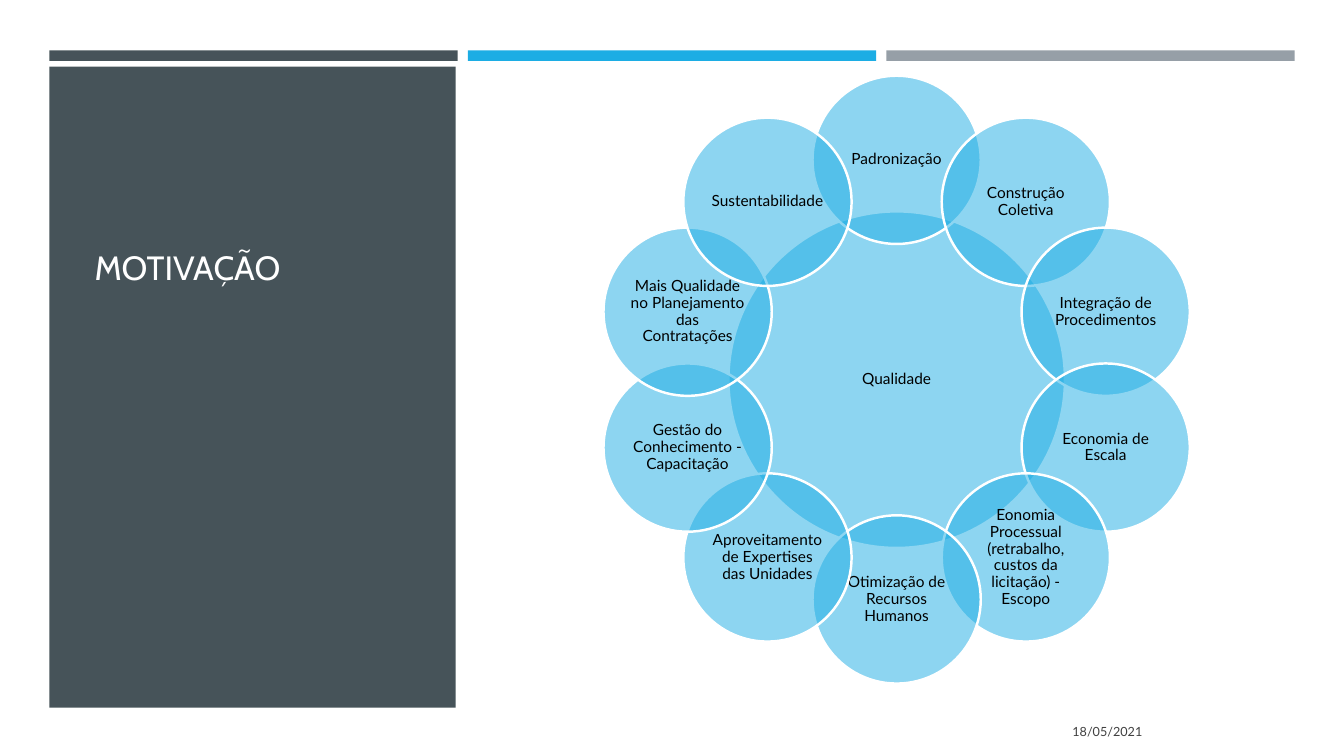
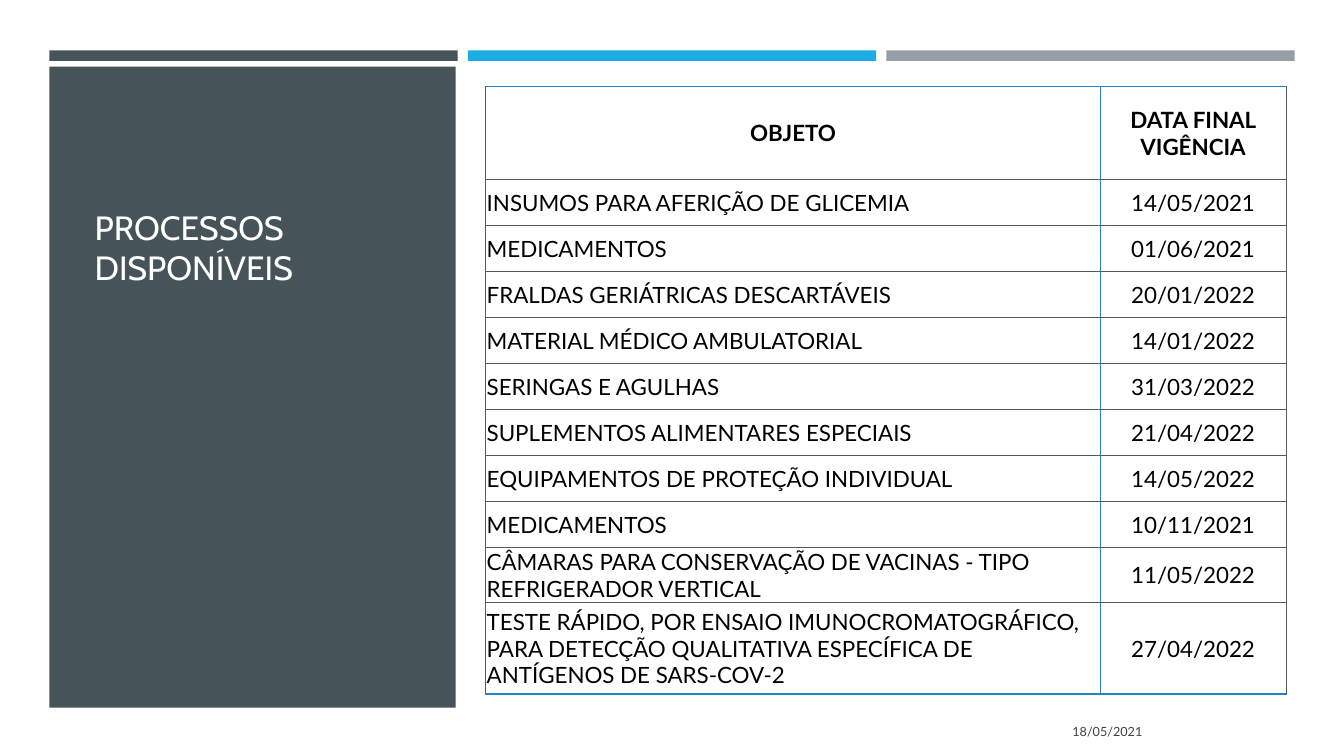
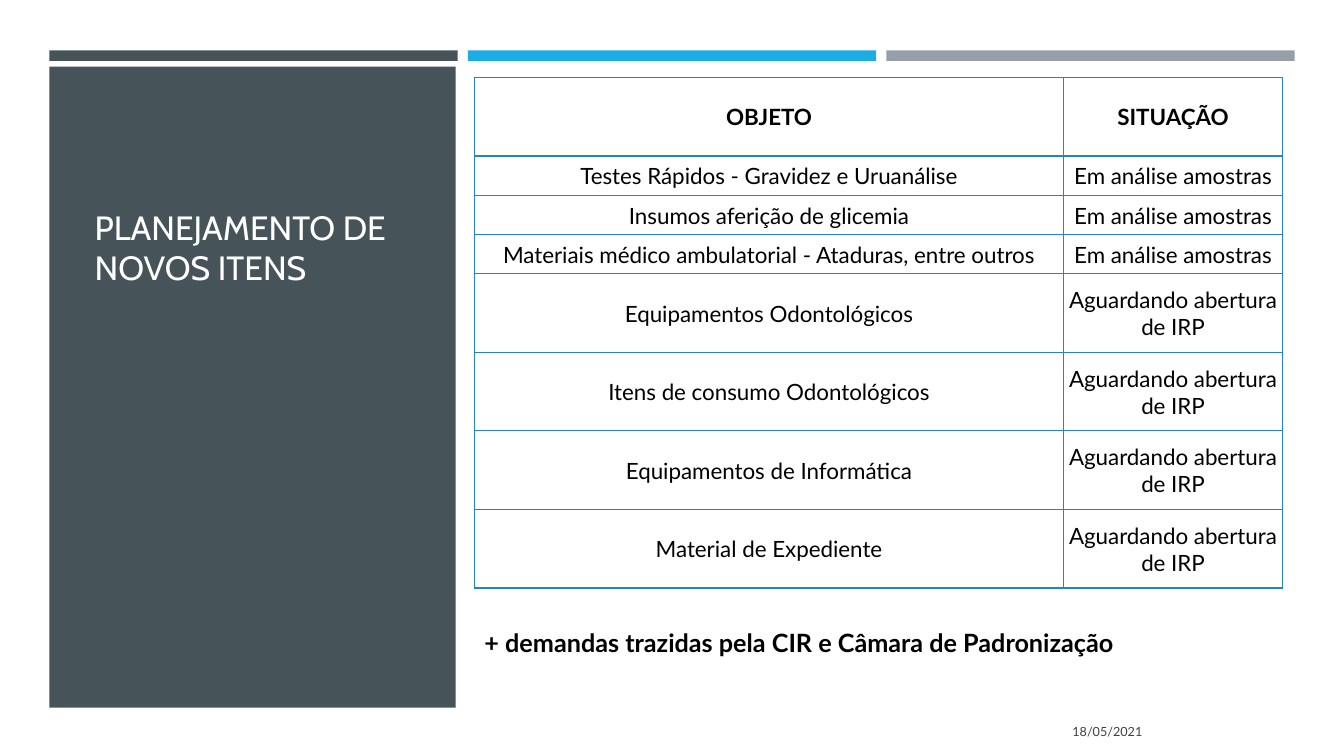
import math

import pptx
import pptx.dml.color
import pptx.enum.shapes
import pptx.enum.text
import pptx.oxml
import pptx.oxml.ns
import pptx.util

Pt = pptx.util.Pt
ALIGN = pptx.enum.text.PP_ALIGN
ANCHOR = pptx.enum.text.MSO_ANCHOR
SHAPE = pptx.enum.shapes.MSO_SHAPE

COLORS = {
    "slate": "465359",
    "sky": "1CADE4",
    "silver": "969FA7",
    "white": "FFFFFF",
    "black": "000000",
    "date": "404040",
    "border": "2683C6",
    "thin": "595959",
}
TITLE_FONT = "Cabin"
BODY_FONT = "Lato"
DATE = "18/05/2021"


def rgb(name):
    return pptx.dml.color.RGBColor.from_string(COLORS[name])


class Deck:
    def __init__(self):
        self.presentation = pptx.Presentation()
        self.presentation.slide_width = Pt(960)
        self.presentation.slide_height = Pt(540)
        self.slide = None

    def start_slide(self, title):
        blank = self.presentation.slide_layouts[6]
        self.slide = self.presentation.slides.add_slide(blank)
        for i, color in enumerate(("slate", "sky", "silver")):
            self.shape(SHAPE.RECTANGLE, 35.3 + i * 298.9, 36, 291.6, 7.6, color)
        self.shape(SHAPE.RECTANGLE, 35.3, 47.5, 290.2, 458, "slate")
        self.text(title, 60.5, 73.4, 239, 135.4, 24, "white",
                  font=TITLE_FONT, anchor=ANCHOR.BOTTOM)
        self.text(DATE, 599, 508.3, 224, 28.8, 9, "date", align=ALIGN.RIGHT)

    def shape(self, kind, left, top, width, height, color):
        shape = self.slide.shapes.add_shape(
            kind, Pt(left), Pt(top), Pt(width), Pt(height))
        shape.shadow.inherit = False
        shape.fill.solid()
        shape.fill.fore_color.rgb = rgb(color)
        shape.line.fill.background()
        return shape

    def fill_text(self, frame, text, size, color, font=BODY_FONT, bold=False,
                  align=ALIGN.LEFT):
        paragraph = frame.paragraphs[0]
        paragraph.text = text
        paragraph.alignment = align
        paragraph.font.name = font
        paragraph.font.size = Pt(size)
        paragraph.font.bold = bold
        paragraph.font.color.rgb = rgb(color)
        return paragraph

    def text(self, text, left, top, width, height, size, color,
             anchor=ANCHOR.MIDDLE, **style):
        box = self.slide.shapes.add_textbox(
            Pt(left), Pt(top), Pt(width), Pt(height))
        box.text_frame.word_wrap = True
        box.text_frame.vertical_anchor = anchor
        self.fill_text(box.text_frame, text, size, color, **style)

    def circle(self, label, center_x, center_y, diameter):
        circle = self.shape(SHAPE.OVAL, center_x - diameter / 2,
                            center_y - diameter / 2, diameter, diameter, "sky")
        tint = circle.element.spPr.find(".//" + pptx.oxml.ns.qn("a:srgbClr"))
        tint.append(pptx.oxml.parse_xml(
            f'<a:alpha {pptx.oxml.ns.nsdecls("a")} val="50000"/>'))
        circle.line.color.rgb = rgb("white")
        circle.line.width = Pt(1.75)
        frame = circle.text_frame
        frame.word_wrap = True
        frame.vertical_anchor = ANCHOR.MIDDLE
        frame.margin_left = frame.margin_right = Pt(1.4)
        frame.margin_top = frame.margin_bottom = Pt(1.4)
        paragraph = self.fill_text(frame, label, 11, "black", align=ALIGN.CENTER)
        paragraph.line_spacing = 0.9

    def ring(self, hub, labels, center_x, center_y, radius, diameter):
        self.circle(hub, center_x, center_y, diameter * 2)
        for i, label in enumerate(labels):
            angle = 2 * math.pi * i / len(labels)
            self.circle(label, center_x + radius * math.sin(angle),
                        center_y - radius * math.cos(angle), diameter)

    def borders(self, cell, sides):
        properties = cell._tc.get_or_add_tcPr()
        for i, (side, (color, width)) in enumerate(sides.items()):
            properties.insert(i, pptx.oxml.parse_xml(
                f'<a:ln{side} {pptx.oxml.ns.nsdecls("a")} w="{Pt(width)}">'
                f'<a:solidFill><a:srgbClr val="{COLORS[color]}"/></a:solidFill>'
                f'</a:ln{side}>'))

    def table(self, rows, left, top, widths, heights, first_align, inner):
        table = self.slide.shapes.add_table(
            len(rows), len(widths), Pt(left), Pt(top),
            Pt(sum(widths)), Pt(sum(heights))).table
        table.first_row = table.horz_banding = False
        for column, width in zip(table.columns, widths):
            column.width = Pt(width)
        strong = ("border", 1)
        last_row, last_column = len(rows) - 1, len(widths) - 1
        for r, values in enumerate(rows):
            table.rows[r].height = Pt(heights[r])
            for c, value in enumerate(values):
                cell = table.cell(r, c)
                cell.fill.background()
                cell.vertical_anchor = ANCHOR.MIDDLE
                cell.margin_left = cell.margin_right = cell.margin_top = Pt(0.7)
                cell.margin_bottom = Pt(0)
                centered = r == 0 or c > 0
                self.fill_text(cell.text_frame, value, 16, "black", bold=r == 0,
                               align=ALIGN.CENTER if centered else first_align)
                self.borders(cell, {
                    "L": inner if c == 0 else strong,
                    "R": inner if c == last_column else strong,
                    "T": strong if r == 0 else inner,
                    "B": strong if r == last_row else inner,
                })


MOTIVES = [
    "Padronização",
    "Construção Coletiva",
    "Integração de Procedimentos",
    "Economia de Escala",
    "Eonomia Processual (retrabalho, custos da licitação) - Escopo",
    "Otimização de Recursos Humanos",
    "Aproveitamento de Expertises das Unidades",
    "Gestão do Conhecimento - Capacitação",
    "Mais Qualidade no Planejamento das Contratações",
    "Sustentabilidade",
]

PROCESSES = [
    ("OBJETO", "DATA FINAL VIGÊNCIA"),
    ("INSUMOS PARA AFERIÇÃO DE GLICEMIA", "14/05/2021"),
    ("MEDICAMENTOS", "01/06/2021"),
    ("FRALDAS GERIÁTRICAS DESCARTÁVEIS", "20/01/2022"),
    ("MATERIAL MÉDICO AMBULATORIAL", "14/01/2022"),
    ("SERINGAS E AGULHAS", "31/03/2022"),
    ("SUPLEMENTOS ALIMENTARES ESPECIAIS", "21/04/2022"),
    ("EQUIPAMENTOS DE PROTEÇÃO INDIVIDUAL", "14/05/2022"),
    ("MEDICAMENTOS", "10/11/2021"),
    ("CÂMARAS PARA CONSERVAÇÃO DE VACINAS - TIPO REFRIGERADOR VERTICAL",
     "11/05/2022"),
    ("TESTE RÁPIDO, POR ENSAIO IMUNOCROMATOGRÁFICO, PARA DETECÇÃO QUALITATIVA "
     "ESPECÍFICA DE ANTÍGENOS DE SARS-COV-2", "27/04/2022"),
]

SAMPLES = "Em análise amostras"
WAITING = "Aguardando abertura de IRP"
NEW_ITEMS = [
    ("OBJETO", "SITUAÇÃO"),
    ("Testes Rápidos - Gravidez e Uruanálise", SAMPLES),
    ("Insumos aferição de glicemia", SAMPLES),
    ("Materiais médico ambulatorial - Ataduras, entre outros", SAMPLES),
    ("Equipamentos Odontológicos", WAITING),
    ("Itens de consumo Odontológicos", WAITING),
    ("Equipamentos de Informática", WAITING),
    ("Material de Expediente", WAITING),
]


def main():
    deck = Deck()

    deck.start_slide("MOTIVAÇÃO")
    deck.ring("Qualidade", MOTIVES, 640.5, 271.2, 157, 120.2)

    deck.start_slide("PROCESSOS DISPONÍVEIS")
    deck.table(PROCESSES, 347, 62, [439, 132.5],
               [65.8] + [32.9] * 8 + [38.6, 65.8], ALIGN.LEFT, ("thin", 0.5))

    deck.start_slide("PLANEJAMENTO DE NOVOS ITENS")
    deck.table(NEW_ITEMS, 339, 55.4, [420.7, 156.5],
               [56.1] + [28.05] * 3 + [56.1] * 4, ALIGN.CENTER, ("border", 1))
    deck.text("+ demandas trazidas pela CIR e Câmara de Padronização",
              339, 444.5, 518.4, 29, 18, "black", bold=True)

    deck.presentation.save("out.pptx")


if __name__ == "__main__":
    main()
